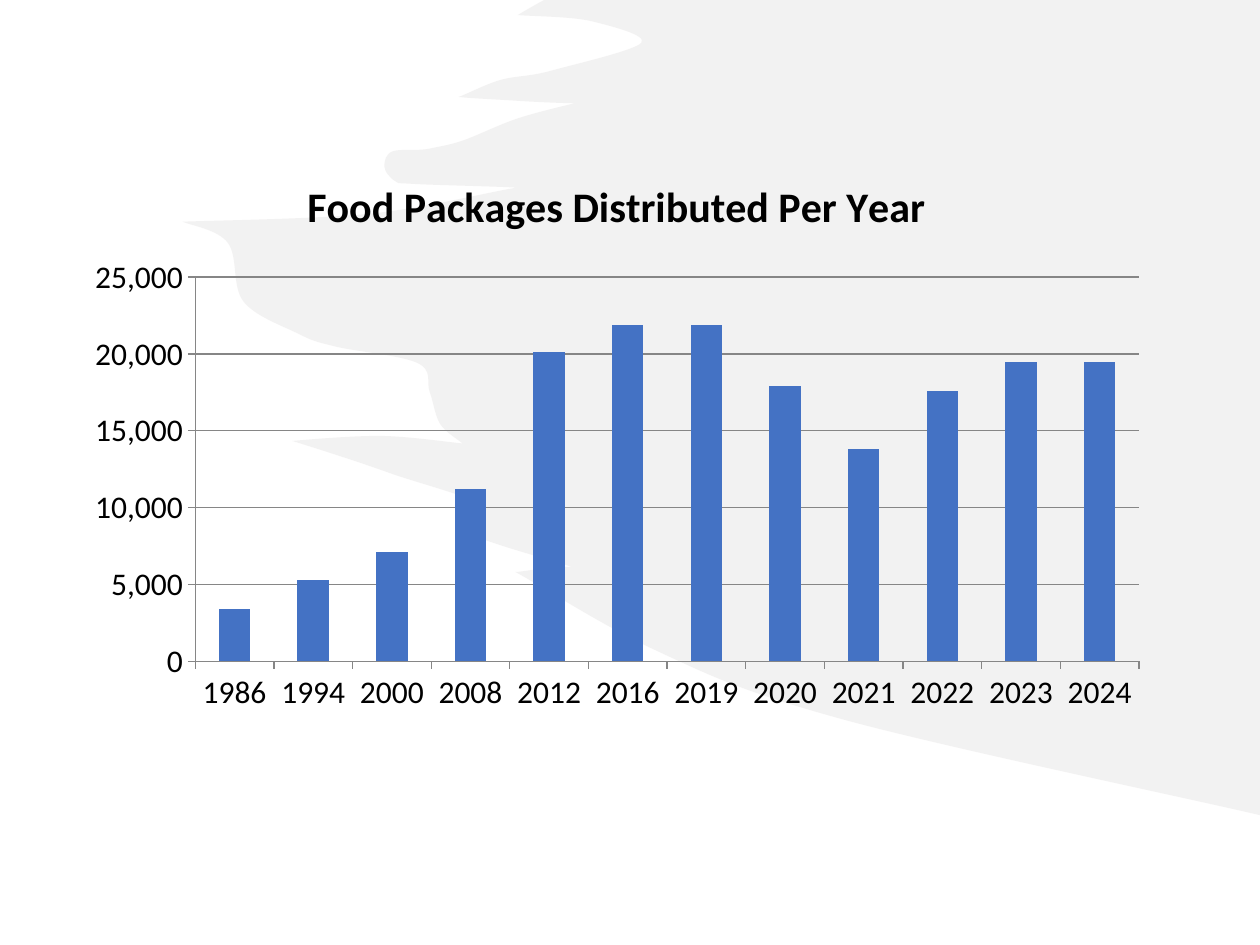
from lxml import etree
from pptx import Presentation
from pptx.chart.data import CategoryChartData
from pptx.dml.color import RGBColor
from pptx.enum.chart import XL_CHART_TYPE, XL_TICK_MARK
from pptx.oxml.ns import qn
from pptx.util import Emu, Pt

COLUMN = XL_CHART_TYPE.COLUMN_CLUSTERED
OUTSIDE, NO_TICK = XL_TICK_MARK.OUTSIDE, XL_TICK_MARK.NONE
PX = 9144
THEME = {
    "font": "Calibri", "text": RGBColor(0, 0, 0), "bar": RGBColor.from_string("4472C4"),
    "brush": RGBColor.from_string("E7E6E6"), "line": RGBColor.from_string("868686"),
    "title": Pt(24), "label": Pt(18), "rule": Pt(0.75), "brush_alpha": "50000",
}
TITLE = "Food Packages Distributed Per Year"
PACKAGES = {
    "1986": 3400, "1994": 5300, "2000": 7100, "2008": 11200,
    "2012": 20100, "2016": 21900, "2019": 21900, "2020": 17900,
    "2021": 13800, "2022": 17600, "2023": 19500, "2024": 19500,
}
SLIDE_W, SLIDE_H = 1000, 750
CHART_BOX = (58, 121, 862, 454)
PLOT_BOX = (155, 220, 749, 305)
TITLE_POS = (238, 135)

BRUSH_TOP, BRUSH_BOTTOM = (432, 0), (SLIDE_W, 647)
BRUSH_EDGES = {
    "top bristle": [BRUSH_TOP, (411, 12)],
    "upper gap": [(411, 12), (470, 17), (509, 34), (438, 56), (399, 63), (364, 77)],
    "thin gap": [(364, 77), (410, 80), (456, 82)],
    "round bristle": [(456, 82), (408, 95), (369, 111), (341, 118), (312, 120),
                      (305, 132), (314, 144), (328, 146), (410, 149)],
    "long bristle": [(410, 149), (290, 170), (145, 176)],
    "stepped edge": [(145, 176), (181, 193), (193, 239), (237, 265), (266, 275),
                     (331, 288), (341, 311), (349, 336), (367, 352)],
    "low gap": [(367, 352), (300, 346), (232, 350)],
    "low bristle": [(232, 350), (308, 375), (384, 402), (370, 422), (454, 450)],
    "last gap": [(454, 450), (432, 451), (409, 454)],
    "tail": [(409, 454), (520, 516), (669, 571), BRUSH_BOTTOM],
}


def smooth(points):
    """Return the Bezier segments of a Catmull-Rom curve through points."""
    padded = [points[0], *points, points[-1]]
    segments = []
    for before, start, end, after in zip(padded, padded[1:], padded[2:], padded[3:]):
        leave = tuple(round(p + (b - a) / 6) for a, p, b in zip(before, start, end))
        arrive = tuple(round(p - (b - a) / 6) for a, p, b in zip(start, end, after))
        segments.append((leave, arrive, end))
    return segments


def lines_to_curves(sp, straight_count):
    lines = list(sp.element.iter(qn("a:lnTo")))[straight_count:]
    for first in range(0, len(lines), 3):
        curve = etree.Element(qn("a:cubicBezTo"))
        lines[first].addprevious(curve)
        for line in lines[first:first + 3]:
            curve.append(line[0])
            line.getparent().remove(line)


def add_brush(s):
    corners = [(SLIDE_W, 0), BRUSH_TOP]
    controls = [point for edge in BRUSH_EDGES.values()
                for segment in smooth(edge) for point in segment]
    fb = s.shapes.build_freeform(*BRUSH_BOTTOM, scale=PX)
    fb.add_line_segments(corners + controls, close=True)
    sp = fb.convert_to_shape()
    lines_to_curves(sp, len(corners))
    sp.shadow.inherit = False
    sp.line.fill.background()
    sp.fill.solid()
    sp.fill.fore_color.rgb = THEME["brush"]
    color = sp.element.spPr.find(qn("a:solidFill"))[0]
    etree.SubElement(color, qn("a:alpha"), val=THEME["brush_alpha"])


def set_layout(parent, index, left, top, width=None, height=None):
    chart_left, chart_top, chart_w, chart_h = CHART_BOX
    values = {"xMode": "edge", "yMode": "edge",
              "x": (left - chart_left) / chart_w, "y": (top - chart_top) / chart_h}
    if width:
        values = {"layoutTarget": "inner", **values,
                  "w": width / chart_w, "h": height / chart_h}
    for old in parent.findall(qn("c:layout")):
        parent.remove(old)
    layout = etree.Element(qn("c:layout"))
    parent.insert(index, layout)
    manual = etree.SubElement(layout, qn("c:manualLayout"))
    for tag, value in values.items():
        etree.SubElement(manual, qn("c:" + tag), val=str(value))


def style_font(font, size):
    font.name, font.size = THEME["font"], size
    font.color.rgb = THEME["text"]


def style_line(line):
    line.color.rgb = THEME["line"]
    line.width = THEME["rule"]


def style_title(chart):
    chart.has_title = True
    title = chart.chart_title
    title.text_frame.text = TITLE
    font = title.text_frame.paragraphs[0].runs[0].font
    style_font(font, THEME["title"])
    font.bold = True
    set_layout(title._element, 1, *TITLE_POS)


def style_bars(plot):
    plot.gap_width = 150
    plot.vary_by_categories = False
    fill = plot.series[0].format.fill
    fill.solid()
    fill.fore_color.rgb = THEME["bar"]
    set_layout(plot._element.getparent(), 0, *PLOT_BOX)


def style_axes(chart):
    for axis in (chart.category_axis, chart.value_axis):
        axis.major_tick_mark, axis.minor_tick_mark = OUTSIDE, NO_TICK
        style_line(axis.format.line)
    axis = chart.value_axis
    axis.minimum_scale, axis.maximum_scale, axis.major_unit = 0, 25000, 5000
    axis.has_major_gridlines = True
    style_line(axis.major_gridlines.format.line)


def add_packages_chart(s):
    data = CategoryChartData(number_format="#,##0")
    data.categories = list(PACKAGES)
    data.add_series("Series 1", list(PACKAGES.values()))
    box = [Emu(v * PX) for v in CHART_BOX]
    chart = s.shapes.add_chart(COLUMN, *box, data).chart
    chart.has_legend = False
    style_font(chart.font, THEME["label"])
    style_title(chart)
    style_bars(chart.plots[0])
    style_axes(chart)
    labels = chart.value_axis.tick_labels
    labels.number_format, labels.number_format_is_linked = "#,##0", False


def main():
    prs = Presentation()
    prs.slide_width, prs.slide_height = Emu(SLIDE_W * PX), Emu(SLIDE_H * PX)
    s = prs.slides.add_slide(prs.slide_layouts[6])
    add_brush(s)
    add_packages_chart(s)
    prs.save("out.pptx")


if __name__ == "__main__":
    main()
